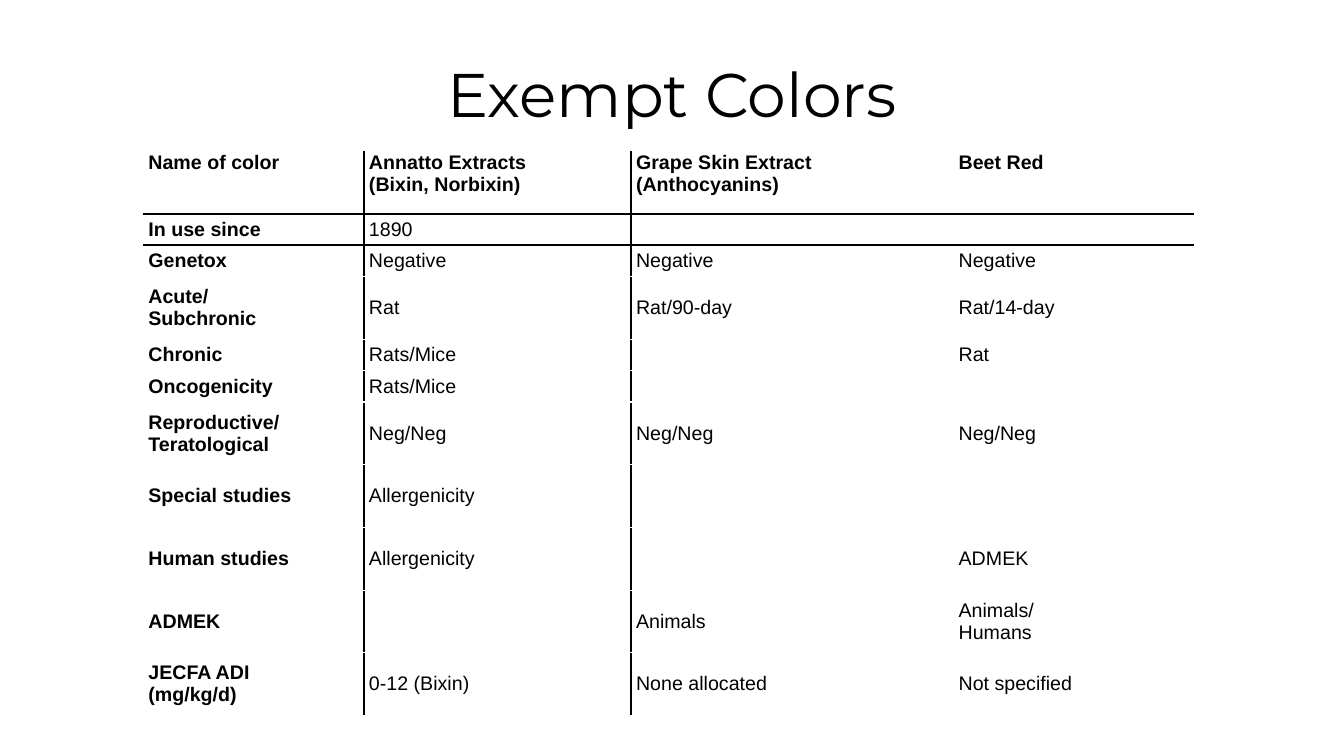
from lxml import etree
from pptx import Presentation
from pptx.dml.color import RGBColor
from pptx.enum.text import MSO_ANCHOR, PP_ALIGN
from pptx.oxml.ns import qn
from pptx.util import Cm, Pt

TOP, MIDDLE = MSO_ANCHOR.TOP, MSO_ANCHOR.MIDDLE
CENTER = PP_ALIGN.CENTER

COLORS = {"ink": "000000", "paper": "FFFFFF"}
WIDTHS = [5.56, 6.73, 8.13, 6.05]
SHORT, TALL = 0.79, 1.58
SMALL = {1, 2, 4, 5}  # rows of one line

ROWS = [
    ["Name of color", "Annatto Extracts\n(Bixin, Norbixin)",
     "Grape Skin Extract\n(Anthocyanins)", "Beet Red"],
    ["In use since", "1890", "", ""],
    ["Genetox", "Negative", "Negative", "Negative"],
    ["Acute/\nSubchronic", "Rat", "Rat/90-day", "Rat/14-day"],
    ["Chronic", "Rats/Mice", "", "Rat"],
    ["Oncogenicity", "Rats/Mice", "", ""],
    ["Reproductive/\nTeratological", "Neg/Neg", "Neg/Neg", "Neg/Neg"],
    ["Special studies", "Allergenicity", "", ""],
    ["Human studies", "Allergenicity", "", "ADMEK"],
    ["ADMEK", "", "Animals", "Animals/\nHumans"],
    ["JECFA ADI\n(mg/kg/d)", "0-12 (Bixin)", "None allocated", "Not specified"],
]


def rgb(name):
    return RGBColor.from_string(COLORS[name])


def style(frame, face, size, bold=False):
    for para in frame.paragraphs:
        for run in para.runs:
            run.font.name = face
            run.font.size = Pt(size)
            run.font.bold = bold
            run.font.color.rgb = rgb("ink")


def add_title(slide, text):
    box = slide.shapes.add_textbox(Cm(1.7), Cm(0.76), Cm(30.48), Cm(3.18))
    frame = box.text_frame
    frame.word_wrap = True
    frame.vertical_anchor = MIDDLE
    frame.text = text
    frame.paragraphs[0].alignment = CENTER
    style(frame, "Montserrat", 44)


def add_edge(cell, side):
    line = etree.SubElement(cell._tc.get_or_add_tcPr(), qn(f"a:ln{side}"),
                            w=str(Pt(1.5)))
    fill = etree.SubElement(line, qn("a:solidFill"))
    etree.SubElement(fill, qn("a:srgbClr"), val=COLORS["ink"])


def fill_cell(cell, text, row, col):
    # Rules right of the first column and under the header row
    edges = {"L": col == 1, "R": col == 0, "T": row == 1, "B": row == 0}
    for side, drawn in edges.items():
        if drawn:
            add_edge(cell, side)
    cell.fill.solid()
    cell.fill.fore_color.rgb = rgb("paper")
    cell.margin_left = cell.margin_right = Cm(0.13)
    cell.margin_top = cell.margin_bottom = 0
    cell.vertical_anchor = TOP if row == 0 else MIDDLE
    cell.text_frame.text = text
    style(cell.text_frame, "Arial", 14, bold=row == 0 or col == 0)


def add_grid(slide):
    heights = [SHORT if i in SMALL else TALL for i in range(len(ROWS))]
    table = slide.shapes.add_table(
        len(ROWS), len(WIDTHS), Cm(3.61), Cm(3.81),
        Cm(sum(WIDTHS)), Cm(sum(heights))).table
    table.horz_banding = False
    table.first_row = False
    for column, width in zip(table.columns, WIDTHS):
        column.width = Cm(width)
    for row, height in zip(table.rows, heights):
        row.height = Cm(height)
    for i, texts in enumerate(ROWS):
        for j, text in enumerate(texts):
            fill_cell(table.cell(i, j), text, i, j)


def main():
    deck = Presentation()
    deck.slide_width, deck.slide_height = Cm(33.87), Cm(19.05)
    slide = deck.slides.add_slide(deck.slide_layouts[6])
    add_title(slide, "Exempt Colors")
    add_grid(slide)
    deck.save("out.pptx")


if __name__ == "__main__":
    main()
